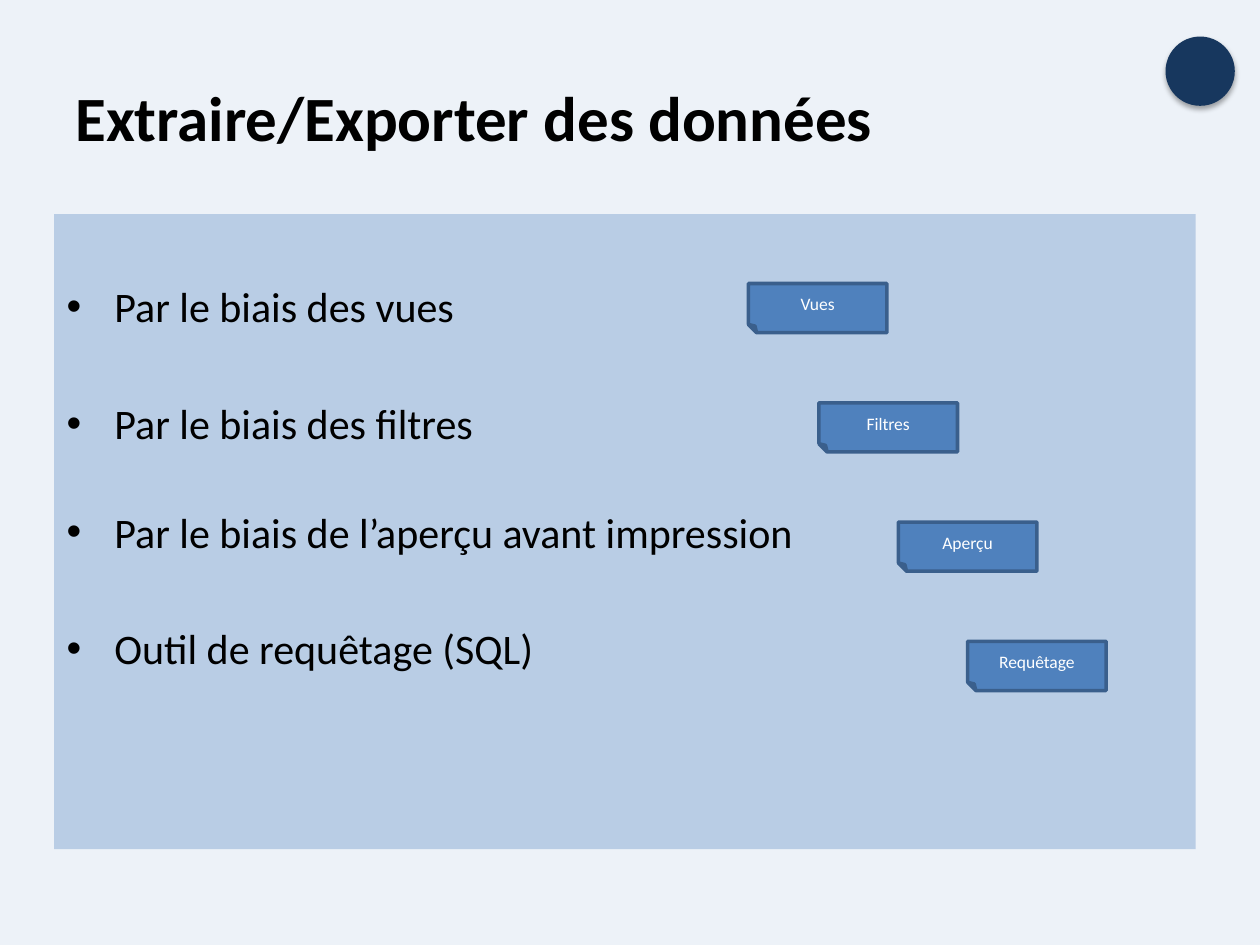
from dataclasses import dataclass

from lxml import etree
from pptx import Presentation
from pptx import util as u
from pptx.dml.color import RGBColor
from pptx.enum import shapes, text
from pptx.oxml import ns


@dataclass(frozen=True)
class Theme:
    font: str = "Calibri"
    background: str = "EDF2F8"
    panel: str = "B9CDE5"
    button: str = "4F81BD"
    button_line: str = "3A5F8C"
    badge: str = "17375E"
    dark: str = "000000"
    light: str = "FFFFFF"
    title_size: int = 36
    body_size: int = 24
    button_size: int = 10


THEME = Theme()
BULLETS = [
    ("Par le biais des vues", 0),
    ("Par le biais des filtres", 38),
    ("Par le biais de l’aperçu avant impression", 33),
    ("Outil de requêtage (SQL)", 38),
]
BUTTONS = [("Vues", 5.94), ("Filtres", 6.5), ("Aperçu", 7.13), ("Requêtage", 7.68)]


def inches(box):
    return [u.Inches(value) for value in box]


def paint(fill, color):
    fill.solid()
    fill.fore_color.rgb = RGBColor.from_string(color)


def style_text(paragraph, size, color, bold=False):
    for run in paragraph.runs:
        run.font.name = THEME.font
        run.font.size = u.Pt(size)
        run.font.bold = bold
        run.font.color.rgb = RGBColor.from_string(color)


def add_bullet(paragraph, indent):
    properties = paragraph._p.get_or_add_pPr()
    properties.set("marL", str(u.Inches(indent)))
    properties.set("indent", str(-u.Inches(indent)))
    font = etree.SubElement(properties, ns.qn("a:buFont"))
    font.set("typeface", "Arial")
    etree.SubElement(properties, ns.qn("a:buChar")).set("char", "•")


def add_title(slide, box, title):
    shape = slide.shapes.add_textbox(*inches(box))
    frame = shape.text_frame
    frame.word_wrap = True
    frame.vertical_anchor = text.MSO_ANCHOR.MIDDLE
    frame.text = title
    style_text(frame.paragraphs[0], THEME.title_size, THEME.dark, bold=True)


def add_panel(slide, box, bullets):
    shape = slide.shapes.add_textbox(*inches(box))
    paint(shape.fill, THEME.panel)
    frame = shape.text_frame
    frame.word_wrap = True
    frame.margin_top = u.Inches(0.53)
    frame.text = "\n".join(label for label, _ in bullets)
    for paragraph, (_, gap) in zip(frame.paragraphs, bullets):
        paragraph.space_before = u.Pt(gap)
        add_bullet(paragraph, 0.38)
        style_text(paragraph, THEME.body_size, THEME.dark)


def add_button(slide, box, label):
    shape = slide.shapes.add_shape(shapes.MSO_SHAPE.FOLDED_CORNER, *inches(box))
    shape.shadow.inherit = False
    shape._element.spPr.find(ns.qn("a:xfrm")).set("flipH", "1")
    paint(shape.fill, THEME.button)
    paint(shape.line.fill, THEME.button_line)
    shape.line.width = u.Pt(2)
    frame = shape.text_frame
    frame.vertical_anchor = text.MSO_ANCHOR.MIDDLE
    frame.text = label
    frame.paragraphs[0].alignment = text.PP_ALIGN.CENTER
    style_text(frame.paragraphs[0], THEME.button_size, THEME.light)


def add_buttons(slide, top, bottom, buttons):
    step = (bottom - top) / (len(buttons) - 1)
    for row, (label, left) in enumerate(buttons):
        add_button(slide, (left, top + row * step, 1.1, 0.39), label)


def add_badge(slide, box):
    shape = slide.shapes.add_shape(shapes.MSO_SHAPE.OVAL, *inches(box))
    shape.shadow.inherit = False
    paint(shape.fill, THEME.badge)
    shape.line.fill.background()
    effects = shape._element.spPr.find(ns.qn("a:effectLst"))
    shadow = etree.SubElement(effects, ns.qn("a:outerShdw"))
    shadow.set("blurRad", str(u.Pt(3.1)))
    shadow.set("dist", str(u.Pt(1.8)))
    shadow.set("dir", str(90 * 60000))
    shadow.set("rotWithShape", "0")
    color = etree.SubElement(shadow, ns.qn("a:srgbClr"))
    color.set("val", THEME.dark)
    etree.SubElement(color, ns.qn("a:alpha")).set("val", "35000")


def main():
    presentation = Presentation()
    presentation.slide_width = u.Inches(10)
    presentation.slide_height = u.Inches(7.5)
    slide = presentation.slides.add_slide(presentation.slide_layouts[6])
    paint(slide.background.fill, THEME.background)
    add_title(slide, (0.5, 0.3, 9, 1.25), "Extraire/Exporter des données")
    add_panel(slide, (0.43, 1.7, 9.06, 5.04), BULLETS)
    add_buttons(slide, 2.25, 5.09, BUTTONS)
    add_badge(slide, (9.25, 0.29, 0.55, 0.55))
    presentation.save("out.pptx")


if __name__ == "__main__":
    main()
